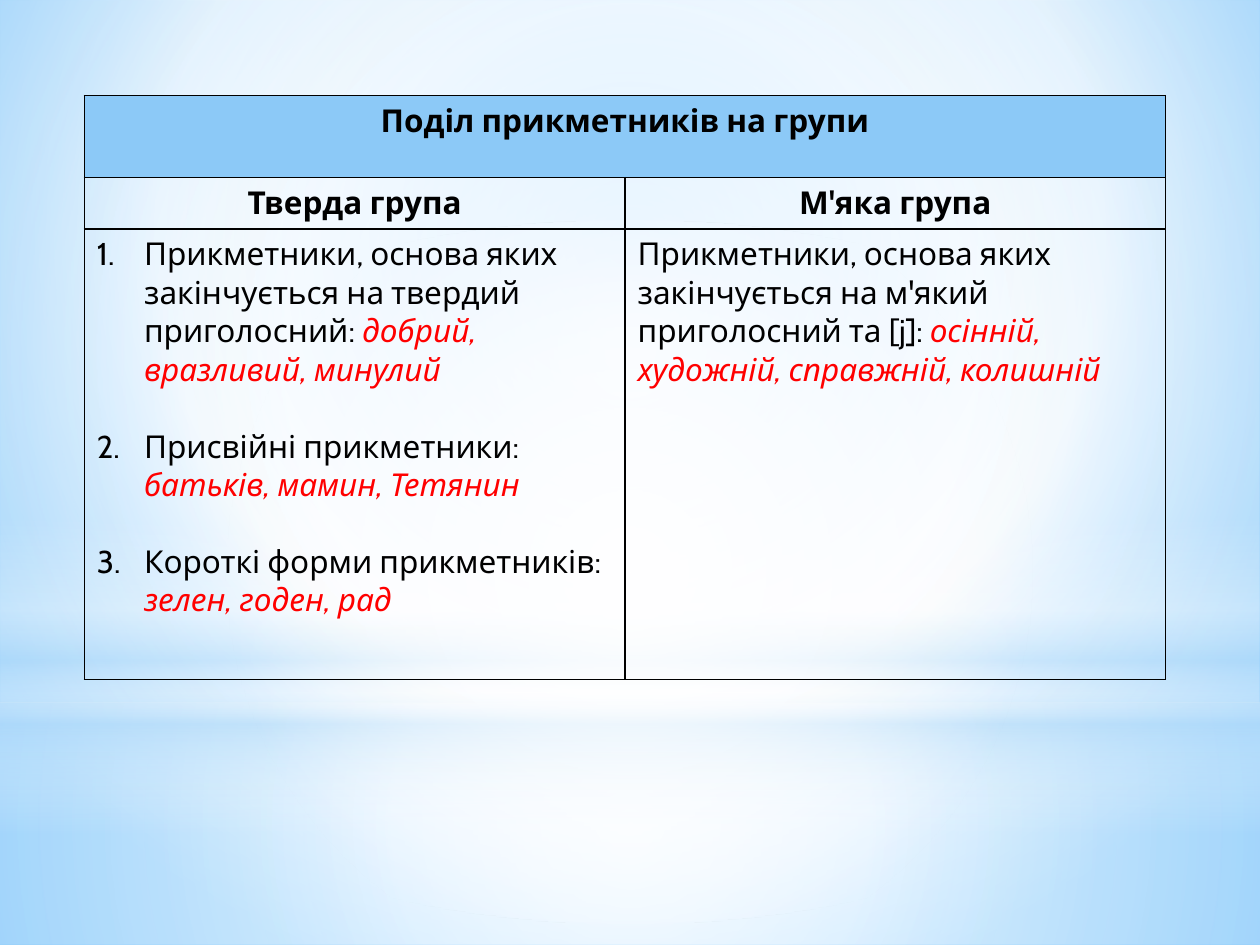
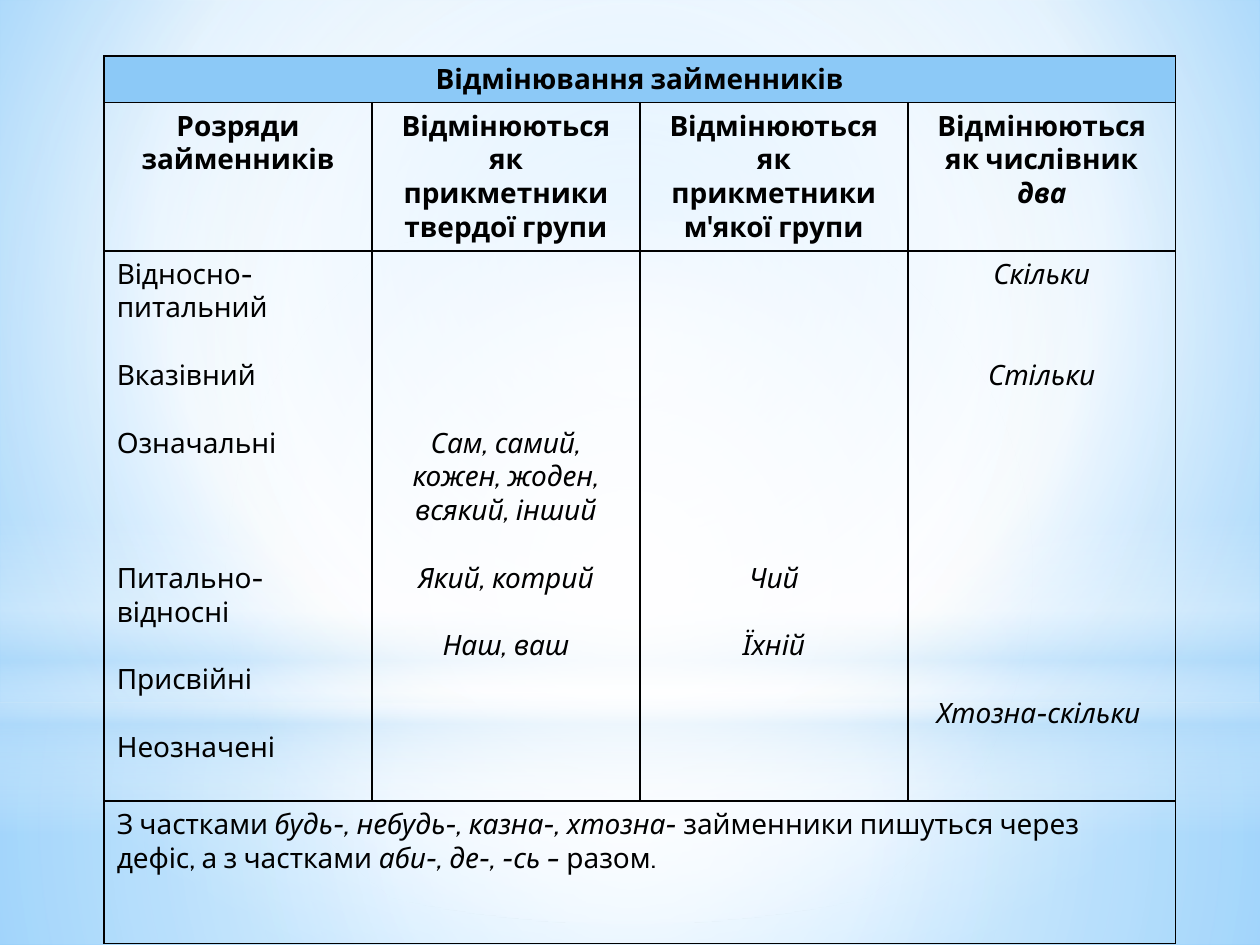
from dataclasses import dataclass

from lxml import etree
from pptx import Presentation
from pptx.dml.color import RGBColor
from pptx.enum.shapes import MSO_SHAPE
from pptx.enum.text import PP_ALIGN
from pptx.oxml import parse_xml
from pptx.oxml.ns import nsdecls, qn
from pptx.util import Cm, Pt

RECTANGLE = MSO_SHAPE.RECTANGLE
OVAL = MSO_SHAPE.OVAL
LEFT = PP_ALIGN.LEFT
CENTER = PP_ALIGN.CENTER

BLANK_LAYOUT = 6
HEADING_ROWS = 2
PAGE_WIDTH = 25.4
PAGE_HEIGHT = 19.05
HORIZON = 14.17
CELL_MARGIN = 0.13


@dataclass(frozen=True)
class Theme:
    font: str = "Cabin"
    ink: str = "000000"
    accent: str = "FF0000"
    title_fill: str = "8CC9F7"
    white: str = "FFFFFF"
    haze: str = "B4DCFA"
    sky: str = "9ED5FF"
    deep_sky: str = "5BB9FF"
    groups_size: int = 18
    pronouns_size: int = 16
    border: float = 1


THEME = Theme()


@dataclass(frozen=True)
class Stop:
    position: int
    color: str
    opacity: int = 100


@dataclass(frozen=True)
class Gradient:
    stops: tuple[Stop, ...]
    focus: tuple[int, int, int, int] | None = (50, 50, 50, 50)


@dataclass(frozen=True)
class Glow:
    preset: MSO_SHAPE
    top: float
    height: float
    gradient: Gradient


@dataclass(frozen=True)
class Span:
    text: str
    italic: bool = False
    color: str = THEME.ink


@dataclass(frozen=True)
class Para:
    spans: tuple[Span, ...]
    lines_before: int = 0


@dataclass(frozen=True)
class Entry:
    paras: tuple[Para, ...]
    align: PP_ALIGN = LEFT
    numbered: bool = False


@dataclass(frozen=True)
class Sheet:
    left: float
    top: float
    column_width: float
    columns: int
    row_heights: tuple[float, ...]
    size: int
    line_height: float
    rows: tuple[tuple[Entry, ...], ...]


def plain(text: str, lines_before: int = 0) -> Para:
    return Para((Span(text),), lines_before)


def italic(text: str, lines_before: int = 0) -> Para:
    return Para((Span(text, italic=True),), lines_before)


def example(rule: str, words: str, lines_before: int = 0) -> Para:
    return Para((Span(rule), Span(words, True, THEME.accent)), lines_before)


def heading(*spans: Span) -> Entry:
    return Entry((Para(spans),), CENTER)


SKY = Gradient(
    (Stop(0, THEME.sky), Stop(60, THEME.white), Stop(100, THEME.deep_sky)),
    (20, 10, 20, 60),
)

GLOWS = (
    Glow(RECTANGLE, HORIZON, PAGE_HEIGHT - HORIZON, Gradient((
        Stop(0, THEME.white, 91), Stop(37, THEME.white, 76), Stop(100, THEME.haze, 79)))),
    Glow(RECTANGLE, 0, HORIZON, Gradient((
        Stop(0, THEME.white, 89), Stop(48, THEME.white, 62), Stop(100, THEME.haze, 79)))),
    Glow(RECTANGLE, 10.46, 6.35, Gradient((
        Stop(0, THEME.white, 0), Stop(29, THEME.white, 30), Stop(45, THEME.haze, 40),
        Stop(55, THEME.white, 26), Stop(65, THEME.haze, 60), Stop(100, THEME.white, 0)), None)),
    Glow(OVAL, 4.45, HORIZON, Gradient((
        Stop(0, THEME.white), Stop(56, THEME.white, 0)))),
)

ADJECTIVE_GROUPS = Sheet(
    left=1.7, top=1.93, column_width=10.9, columns=2, row_heights=(1.65, 0.94, 9.09),
    size=THEME.groups_size, line_height=22,
    rows=(
        (heading(Span("Поділ прикметників на групи")),),
        (heading(Span("Тверда група")), heading(Span("М'яка група"))),
        (
            Entry((
                example("Прикметники, основа яких закінчується на твердий приголосний: ",
                        "добрий, вразливий, минулий"),
                example("Присвійні прикметники: ", "батьків, мамин, Тетянин", 1),
                example("Короткі форми прикметників: ", "зелен, годен, рад", 1),
            ), numbered=True),
            Entry((
                example("Прикметники, основа яких закінчується на м'який приголосний та [j]: ",
                        "осінній, художній, справжній, колишній"),
            )),
        ),
    ),
)

PRONOUN_DECLENSION = Sheet(
    left=2.1, top=1.13, column_width=5.4, columns=4, row_heights=(0.93, 2.96, 11.09, 2.87),
    size=THEME.pronouns_size, line_height=19.3,
    rows=(
        (heading(Span("Відмінювання займенників")),),
        (
            heading(Span("Розряди займенників")),
            heading(Span("Відмінюються як прикметники твердої групи")),
            heading(Span("Відмінюються як прикметники м'якої групи")),
            heading(Span("Відмінюються як числівник "), Span("два", italic=True)),
        ),
        (
            Entry((plain("Відносно-питальний"), plain("Вказівний", 1), plain("Означальні", 1),
                   plain("Питально-відносні", 3), plain("Присвійні", 1),
                   plain("Неозначені", 1))),
            Entry((italic("Сам, самий, кожен, жоден, всякий, інший", 5),
                   italic("Який, котрий", 1), italic("Наш, ваш", 1)), CENTER),
            Entry((italic("Чий", 9), italic("Їхній", 1)), CENTER),
            Entry((italic("Скільки"), italic("Стільки", 2),
                   italic("Хтозна-скільки ", 9)), CENTER),
        ),
        (
            Entry((Para((
                Span("З частками "),
                Span("будь-, небудь-, казна-, хтозна- ", italic=True),
                Span("займенники пишуться через дефіс, а з частками "),
                Span("аби-, де-, -сь – ", italic=True),
                Span("разом."),
            )),)),
        ),
    ),
)


def paint_gradient(properties, gradient: Gradient) -> None:
    stops = "".join(
        f'<a:gs pos="{stop.position * 1000}"><a:srgbClr val="{stop.color}">'
        f'<a:alpha val="{stop.opacity * 1000}"/></a:srgbClr></a:gs>'
        for stop in gradient.stops
    )
    if gradient.focus is None:
        direction = '<a:lin ang="5400000" scaled="0"/>'
    else:
        sides = " ".join(f'{side}="{share * 1000}"' for side, share in zip("ltrb", gradient.focus))
        direction = f'<a:path path="circle"><a:fillToRect {sides}/></a:path>'
    fill = parse_xml(
        f'<a:gradFill {nsdecls("a")} rotWithShape="1"><a:gsLst>{stops}</a:gsLst>'
        f'{direction}</a:gradFill>'
    )
    properties.replace(properties.find(qn("a:solidFill")), fill)


def decorate_master(deck, page) -> None:
    master = deck.slide_master
    master.background.fill.solid()
    master.background.fill.fore_color.rgb = RGBColor.from_string(THEME.white)
    paint_gradient(master.element.find(".//" + qn("p:bgPr")), SKY)
    for glow in GLOWS:
        shape = page.shapes.add_shape(
            glow.preset, Cm(0), Cm(glow.top), Cm(PAGE_WIDTH), Cm(glow.height))
        shape.shadow.inherit = False
        shape.line.fill.background()
        shape.fill.solid()
        paint_gradient(shape.element.spPr, glow.gradient)
        master.shapes.element.append(shape.element)


def write_span(paragraph, text: str, *, size: int, bold: bool, slanted: bool, color: str) -> None:
    run = paragraph.add_run()
    run.text = text
    run.font.name = THEME.font
    run.font.size = Pt(size)
    run.font.bold = bold
    run.font.italic = slanted
    run.font.color.rgb = RGBColor.from_string(color)


def number_paragraph(paragraph) -> None:
    properties = paragraph._p.get_or_add_pPr()
    indent = Cm(0.95)
    properties.set("marL", str(indent))
    properties.set("indent", str(-indent))
    etree.SubElement(properties, qn("a:buFont"), typeface=THEME.font)
    etree.SubElement(properties, qn("a:buAutoNum"), type="arabicPeriod")


def draw_borders(cell) -> None:
    properties = cell._tc.get_or_add_tcPr()
    for side in ("lnL", "lnR", "lnT", "lnB"):
        line = etree.SubElement(properties, qn(f"a:{side}"), w=str(Pt(THEME.border)))
        fill = etree.SubElement(line, qn("a:solidFill"))
        etree.SubElement(fill, qn("a:srgbClr"), val=THEME.ink)


def fill_entry(cell, entry: Entry, sheet: Sheet, bold: bool) -> None:
    frame = cell.text_frame
    first_offset = entry.paras[0].lines_before * sheet.line_height
    cell.margin_top = Cm(CELL_MARGIN) + Pt(first_offset)
    for index, para in enumerate(entry.paras):
        paragraph = frame.add_paragraph() if index else frame.paragraphs[0]
        paragraph.alignment = entry.align
        if index and para.lines_before:
            paragraph.space_before = Pt(para.lines_before * sheet.line_height)
        if entry.numbered:
            number_paragraph(paragraph)
        for span in para.spans:
            write_span(paragraph, span.text, size=sheet.size, bold=bold,
                       slanted=span.italic, color=span.color)


def draw_sheet(page, sheet: Sheet) -> None:
    table = page.shapes.add_table(
        len(sheet.rows), sheet.columns, Cm(sheet.left), Cm(sheet.top),
        Cm(sheet.column_width * sheet.columns), Cm(sum(sheet.row_heights))).table
    table.first_row = False
    table.horz_banding = False
    for column in table.columns:
        column.width = Cm(sheet.column_width)
    for row_index, (height, entries) in enumerate(zip(sheet.row_heights, sheet.rows)):
        table.rows[row_index].height = Cm(height)
        cells = [table.cell(row_index, column) for column in range(sheet.columns)]
        for cell in cells:
            draw_borders(cell)
            if row_index == 0:
                cell.fill.solid()
                cell.fill.fore_color.rgb = RGBColor.from_string(THEME.title_fill)
            else:
                cell.fill.background()
        if len(entries) == 1:
            cells[0].merge(cells[-1])
        for cell, entry in zip(cells, entries):
            fill_entry(cell, entry, sheet, bold=row_index < HEADING_ROWS)


def main() -> None:
    deck = Presentation()
    deck.slide_width = Cm(PAGE_WIDTH)
    deck.slide_height = Cm(PAGE_HEIGHT)
    layout = deck.slide_layouts[BLANK_LAYOUT]
    pages = [deck.slides.add_slide(layout) for _ in range(2)]
    decorate_master(deck, pages[0])
    for page, sheet in zip(pages, (ADJECTIVE_GROUPS, PRONOUN_DECLENSION)):
        draw_sheet(page, sheet)
    deck.save("out.pptx")


if __name__ == "__main__":
    main()
